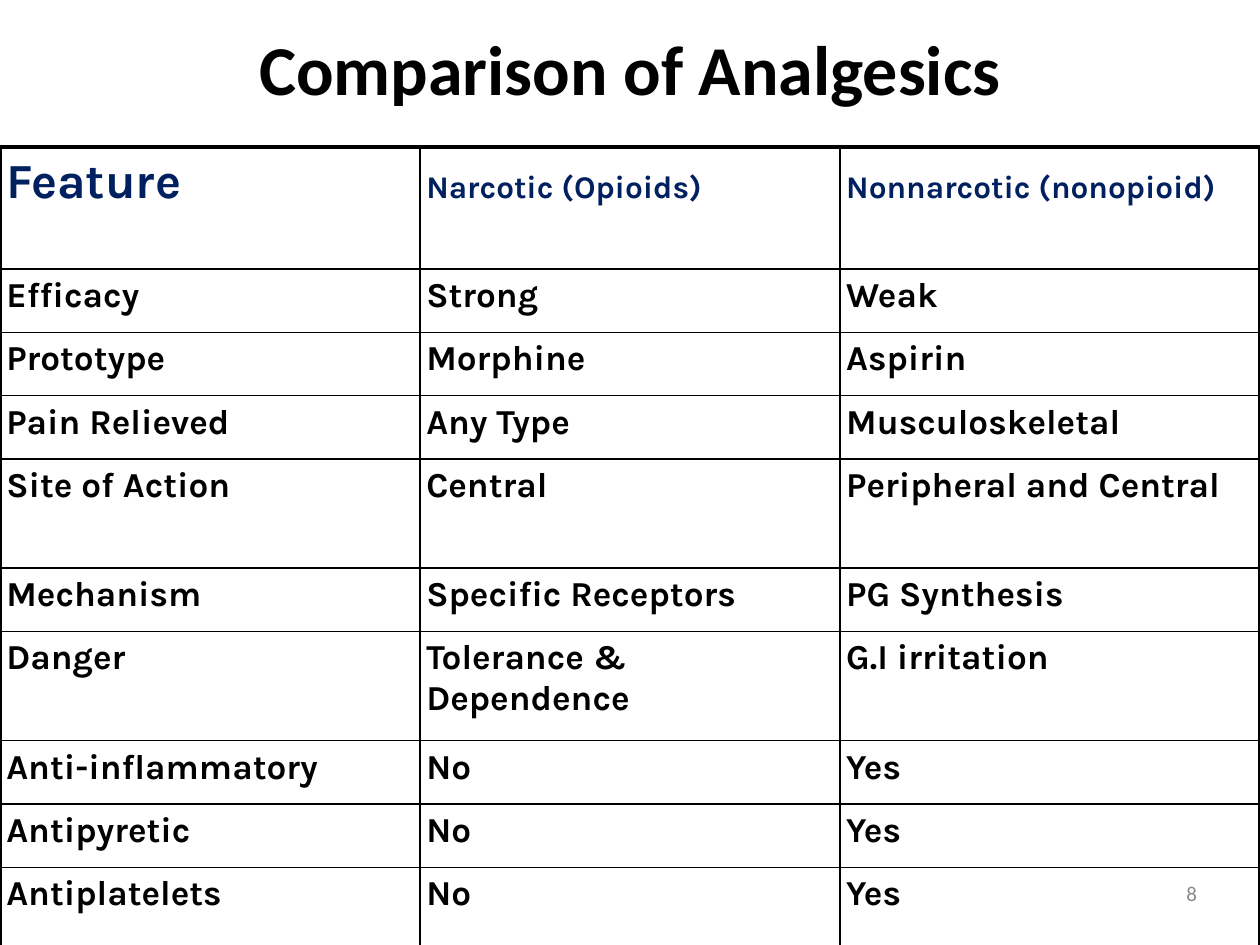
from pptx import Presentation
from pptx.dml.color import RGBColor
from pptx.enum.text import MSO_ANCHOR, PP_ALIGN
from pptx.oxml.ns import qn
from pptx.util import Pt
from lxml.etree import SubElement

COLORS = {"ink": "000000", "header": "002060", "number": "898989"}
PAGE_WIDTH, PAGE_HEIGHT = 720, 540
THIN, THICK = 1, 2.25

HEADER = ["Feature", "Narcotic (Opioids)", "Nonnarcotic (nonopioid)"]
ROWS = [
    ["Efficacy", "Strong", "Weak"],
    ["Prototype", "Morphine", "Aspirin"],
    ["Pain Relieved", "Any Type", "Musculoskeletal"],
    ["Site of Action", "Central", "Peripheral and Central"],
    ["Mechanism", "Specific Receptors", "PG Synthesis"],
    ["Danger", "Tolerance & Dependence", "G.I irritation"],
    ["Anti-inflammatory", "No", "Yes"],
    ["Antipyretic", "No", "Yes"],
    ["Antiplatelets", "No", "Yes"],
]
ROW_HEIGHT = 36.2
TALL_ROWS = {"Feature": 69.7, "Site of Action": 62.4, "Danger": 62.4, "Antiplatelets": 67.6}


def add_span(para, text, size=20, font="Karla", color="ink", bold=True):
    span = para.add_run()
    span.text = text
    span.font.size = Pt(size)
    span.font.name = font
    span.font.bold = bold
    span.font.color.rgb = RGBColor.from_string(COLORS[color])


def set_margins(holder, margin):
    holder.margin_left = holder.margin_right = Pt(margin)
    holder.margin_top = holder.margin_bottom = Pt(margin)


def set_borders(cell, widths):
    """Draw the cell's left, right, top and bottom lines, in that order."""
    properties = cell._tc.get_or_add_tcPr()
    for side, width in zip("LRTB", widths):
        line = SubElement(properties, qn(f"a:ln{side}"), w=str(Pt(width)))
        fill = SubElement(line, qn("a:solidFill"))
        SubElement(fill, qn("a:srgbClr"), val=COLORS["ink"])


class SlideBuilder:
    """Holds the shared style and the page being filled."""

    cell_margin = 3.6
    header_space, body_space = 6, 4

    def __init__(self, page):
        self.page = page

    def text(self, text, left, top, width, height, align, **style):
        box = self.page.shapes.add_textbox(Pt(left), Pt(top), Pt(width), Pt(height))
        frame = box.text_frame
        frame.word_wrap = True
        frame.vertical_anchor = MSO_ANCHOR.MIDDLE
        set_margins(frame, 0)
        para = frame.paragraphs[0]
        para.alignment = align
        add_span(para, text, font="Calibri", **style)

    def table(self, rows, left, top, width):
        heights = [TALL_ROWS.get(row[0], ROW_HEIGHT) for row in rows]
        column_count = len(rows[0])
        table = self.page.shapes.add_table(
            len(rows), column_count, Pt(left), Pt(top), Pt(width), Pt(sum(heights))
        ).table
        table.first_row = table.horz_banding = False
        for column in table.columns:
            column.width = Pt(width / column_count)
        for r, (texts, height) in enumerate(zip(rows, heights)):
            table.rows[r].height = Pt(height)
            for c, text in enumerate(texts):
                cell = table.cell(r, c)
                outer = (c == 0, c == column_count - 1, r == 0, r == len(rows) - 1)
                set_borders(cell, [THICK if edge else THIN for edge in outer])
                cell.fill.background()
                set_margins(cell, self.cell_margin)
                self.cell_text(cell.text_frame.paragraphs[0], text, r == 0, c == 0)

    def cell_text(self, para, text, is_header, is_first):
        para.space_before = Pt(self.header_space if is_header else self.body_space)
        if not is_header:
            add_span(para, text)
        elif is_first:
            add_span(para, text, size=28, color="header")
        else:
            add_span(para, text, size=18, color="header")
            # The large space gives all header cells the same baseline.
            add_span(para, " ", size=28, color="header")


def main():
    deck = Presentation()
    deck.slide_width, deck.slide_height = Pt(PAGE_WIDTH), Pt(PAGE_HEIGHT)
    builder = SlideBuilder(deck.slides.add_slide(deck.slide_layouts[6]))
    builder.table([HEADER] + ROWS, 0, 84, PAGE_WIDTH)
    builder.text("8", 516, 500, 168, 21, PP_ALIGN.RIGHT, size=12, color="number", bold=False)
    builder.text("Comparison of Analgesics", 0, 0, PAGE_WIDTH, 77, PP_ALIGN.CENTER, size=40)
    deck.save("out.pptx")


if __name__ == "__main__":
    main()
